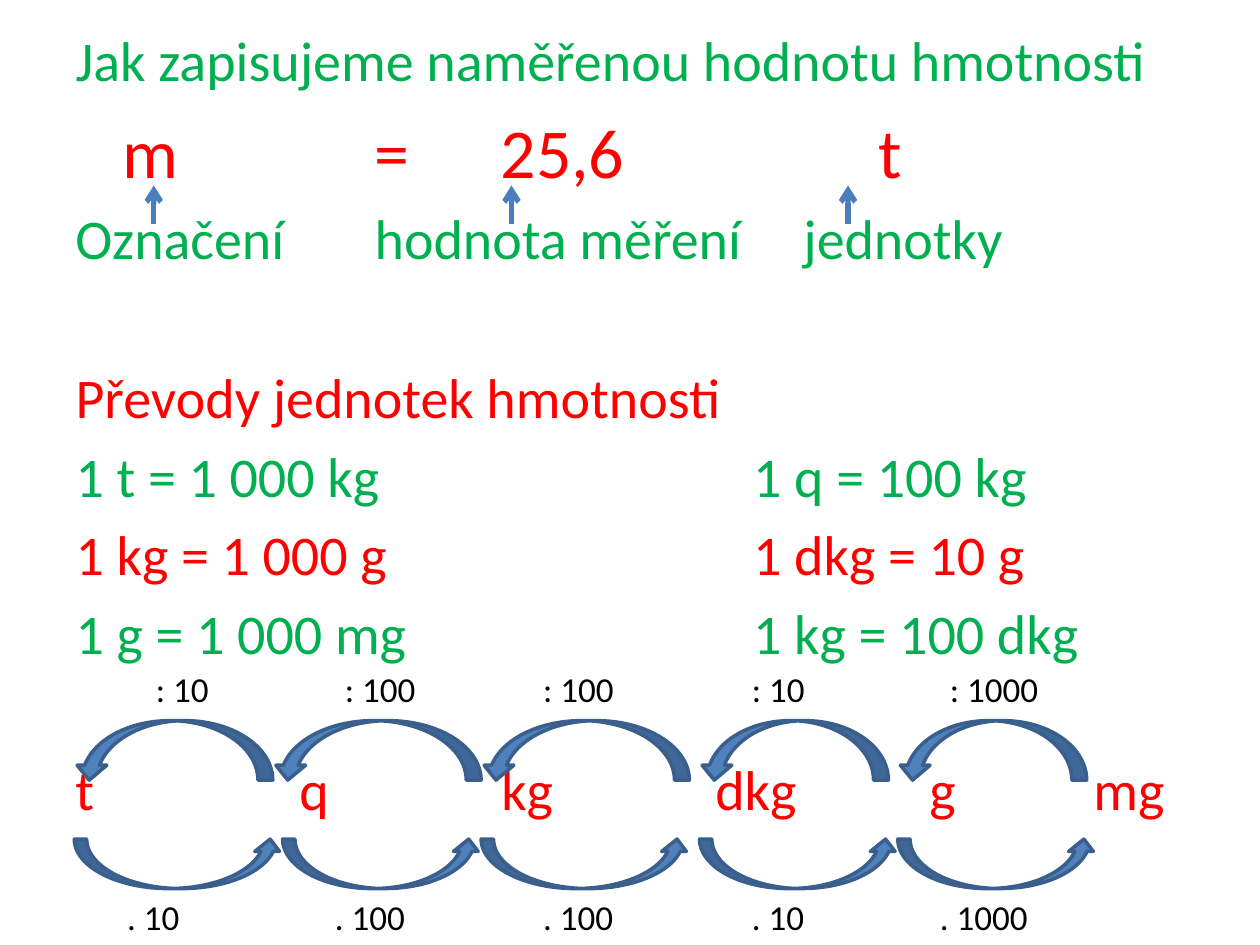
from lxml.etree import SubElement
from pptx import Presentation
from pptx.dml.color import RGBColor
from pptx.enum.shapes import MSO_CONNECTOR, MSO_SHAPE
from pptx.enum.text import MSO_ANCHOR, MSO_AUTO_SIZE, PP_ALIGN
from pptx.oxml.ns import qn
from pptx.util import Pt

COLORS = {"green": "00B050", "red": "FF0000", "black": "000000",
          "fill": "4F81BD", "edge": "3A5F8C", "arrow": "4B7EBC"}
FONT = "Calibri"
LEFT, WIDTH = 36, 648
RIGHT = 423.2
LIST_TOP, LINE_STEP = 203.7, 44.8

# text, colour, size, tab stops
TITLE = [("Jak zapisujeme naměřenou hodnotu hmotnosti", "green", 32, [])]
FORMULA = [
    ("\tm\t=\t25,6\tt", "red", 40, [27, 171, 243, 459]),
    ("Označení\thodnota měření\tjednotky", "green", 32, [171, 416]),
]
LEFT_LIST = [
    ("Převody jednotek hmotnosti", "red", 32, []),
    ("1 t = 1 000 kg", "green", 32, []),
    ("1 kg = 1 000 g", "red", 32, []),
    ("1 g = 1 000 mg", "green", 32, []),
]
RIGHT_LIST = [
    ("1 q = 100 kg", "green", 32, []),
    ("1 dkg = 10 g", "red", 32, []),
    ("1 kg = 100 dkg", "green", 32, []),
]
UNITS = [("t\tq\tkg\tdkg\tg\tmg", "red", 32, [128, 243.4, 365.7, 488, 581.7])]

POINTERS = [87.9, 292.3, 484.6]
FACTORS = ["10", "100", "100", "10", "1000"]
# sign, shape, flipped, arrow top, arrow height, label top, arrow (left, width), label left
ROWS = [
    (":", MSO_SHAPE.CURVED_DOWN_ARROW, True, 411.8, 34, 378,
     [(42.5, 113.4), (156, 119), (275, 119), (399.7, 108), (513, 108)],
     [82, 190, 303.3, 422.6, 535.7]),
    (".", MSO_SHAPE.CURVED_UP_ARROW, False, 479.5, 28.3, 508.3,
     [(42.5, 119), (161.5, 113.4), (275, 119), (399.7, 113.4), (513, 113.4)],
     [65.5, 184.3, 303.3, 422.6, 530]),
]


def color(name):
    return RGBColor.from_string(COLORS[name])


def add_run(p, text, size, name):
    r = p.add_run()
    r.text = text
    r.font.name = FONT
    r.font.size = Pt(size)
    r.font.color.rgb = color(name)


def fill_text(sp, lines, x, y, w, h, is_list=False):
    sp.left, sp.top, sp.width, sp.height = Pt(x), Pt(y), Pt(w), Pt(h)
    tf = sp.text_frame
    tf.word_wrap = True
    tf.auto_size = MSO_AUTO_SIZE.NONE
    tf.vertical_anchor = MSO_ANCHOR.TOP
    for i, (text, name, size, tabs) in enumerate(lines):
        p = tf.add_paragraph() if i else tf.paragraphs[0]
        pPr = p._p.get_or_add_pPr()
        if is_list:
            pPr.set("marL", "0")
            pPr.set("indent", "0")
            SubElement(pPr, qn("a:buNone"))
        if tabs:
            tab_list = SubElement(pPr, qn("a:tabLst"))
            for pos in tabs:
                SubElement(tab_list, qn("a:tab"), pos=str(int(Pt(pos))), algn="l")
        p.alignment = PP_ALIGN.LEFT
        p.space_before = Pt(6.4 if i else 0)
        add_run(p, text, size, name)


def add_text(s, lines, y, h):
    fill_text(s.shapes.add_textbox(0, 0, 0, 0), lines, LEFT, y, WIDTH, h)


def add_pointer(s, x):
    c = s.shapes.add_connector(MSO_CONNECTOR.STRAIGHT, Pt(x), Pt(128), Pt(x), Pt(106))
    c.line.color.rgb = color("arrow")
    c.line.width = Pt(3)
    SubElement(c.line._get_or_add_ln(), qn("a:tailEnd"), type="arrow")
    SubElement(c._element.spPr, qn("a:effectLst"))


def add_curve(s, shape, flipped, x, y, w, h):
    sp = s.shapes.add_shape(shape, Pt(x), Pt(y), Pt(w), Pt(h))
    sp.shadow.inherit = False
    sp.fill.solid()
    sp.fill.fore_color.rgb = color("fill")
    sp.line.color.rgb = color("edge")
    sp.line.width = Pt(2)
    if flipped:
        sp._element.spPr.xfrm.set("flipH", "1")


def add_label(s, text, x, y):
    tf = s.shapes.add_textbox(Pt(x), Pt(y), Pt(68), Pt(31.5)).text_frame
    tf.word_wrap = True
    add_run(tf.paragraphs[0], text, 20, "black")


def main():
    prs = Presentation()
    prs.slide_width, prs.slide_height = Pt(720), Pt(540)
    s = prs.slides.add_slide(prs.slide_layouts[3])
    fill_text(s.shapes.title, TITLE, LEFT, 11, WIDTH, 46)
    fill_text(s.placeholders[1], LEFT_LIST, LEFT, LIST_TOP, RIGHT - LEFT, 184, True)
    fill_text(s.placeholders[2], RIGHT_LIST, RIGHT, LIST_TOP + LINE_STEP,
              LEFT + WIDTH - RIGHT, 139, True)
    add_text(s, FORMULA, 58.6, 103)
    add_text(s, UNITS, LIST_TOP + 5 * LINE_STEP, 46)
    for x in POINTERS:
        add_pointer(s, x)
    for sign, shape, flipped, top, height, label_top, arrows, labels in ROWS:
        for factor, (x, w), label_x in zip(FACTORS, arrows, labels):
            add_curve(s, shape, flipped, x, top, w, height)
            add_label(s, f"{sign} {factor}", label_x, label_top)
    prs.save("out.pptx")


if __name__ == "__main__":
    main()
